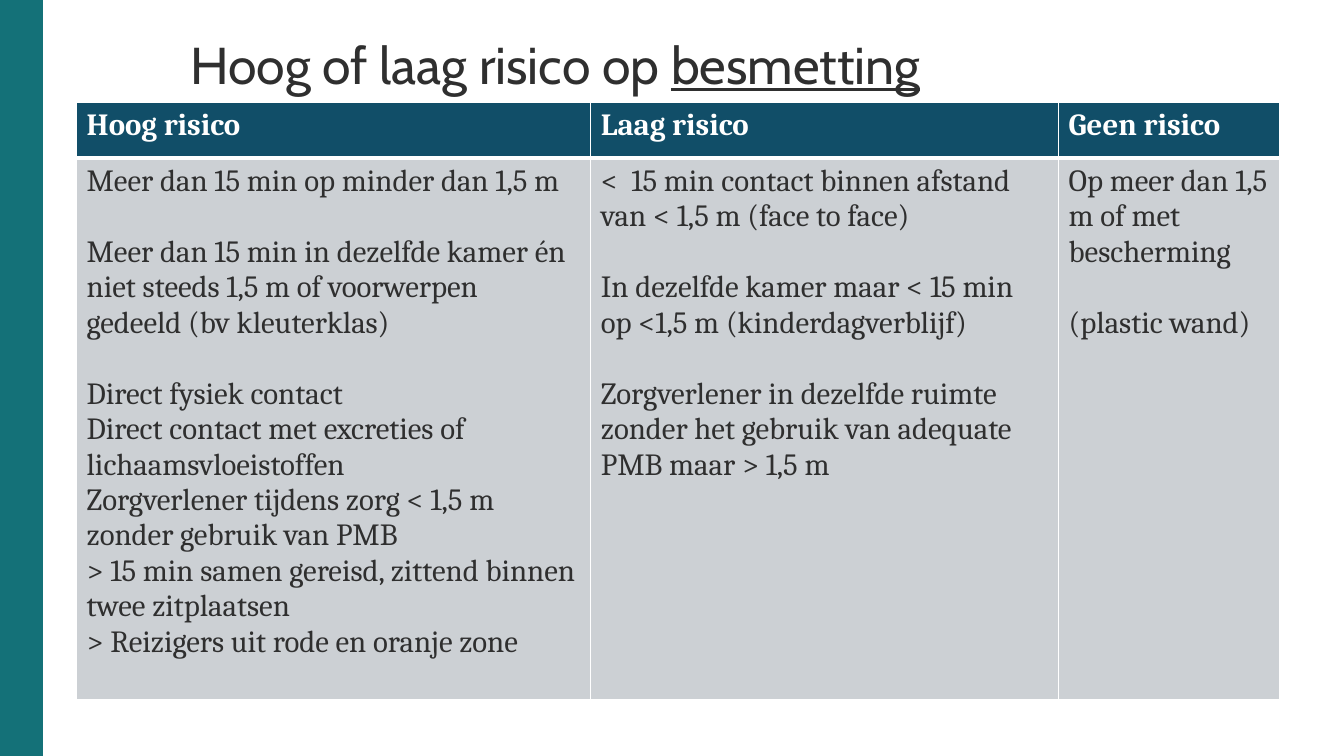
from dataclasses import dataclass

from lxml.etree import SubElement
from pptx import Presentation
from pptx.dml.color import RGBColor as Color
from pptx.enum.shapes import MSO_SHAPE as Shape
from pptx.enum.text import MSO_ANCHOR as Anchor, MSO_AUTO_SIZE as AutoSize, PP_ALIGN as Align
from pptx.oxml.ns import qn
from pptx.util import Inches, Pt


@dataclass(frozen=True)
class Theme:
    bar: str = "147178"
    header: str = "114E68"
    body: str = "CCD0D4"
    ink: str = "2F2F2F"
    white: str = "FFFFFF"
    title_font: str = "Cabin"
    table_font: str = "Cambria"
    title_size: float = 37
    title_line: float = 38
    table_size: float = 22
    group_gap: float = 25.4


THEME = Theme()
COLUMN_WIDTHS = (5.1, 4.64, 2.19)
ROW_HEIGHTS = (0.55, 5.37)
HEADERS = ("Hoog risico", "Laag risico", "Geen risico")
# Each column holds groups of paragraphs, with a gap between the groups.
RISKS = (
    (
        ("Meer dan 15 min op minder dan 1,5 m",),
        ("Meer dan 15 min in dezelfde kamer én niet steeds 1,5 m of "
         "voorwerpen  gedeeld (bv kleuterklas)",),
        ("Direct fysiek contact",
         "Direct contact met excreties of lichaamsvloeistoffen",
         "Zorgverlener tijdens zorg < 1,5 m zonder gebruik van PMB",
         "> 15 min samen gereisd, zittend binnen twee zitplaatsen",
         "> Reizigers uit rode en oranje zone"),
    ),
    (
        ("<  15 min contact binnen afstand van < 1,5 m (face to face)",),
        ("In dezelfde kamer maar < 15 min op <1,5 m (kinderdagverblijf)",),
        ("Zorgverlener in dezelfde ruimte zonder het gebruik van adequate "
         "PMB maar > 1,5 m",),
    ),
    (
        ("Op meer dan 1,5 m of met bescherming",),
        ("(plastic wand)",),
    ),
)


def add_side_bar(page, height):
    bar = page.shapes.add_shape(Shape.RECTANGLE, 0, 0, Inches(0.42), height)
    bar.shadow.inherit = False
    bar.fill.solid()
    bar.fill.fore_color.rgb = Color.from_string(THEME.bar)
    bar.line.color.rgb = Color.from_string(THEME.bar)
    bar.line.width = Pt(1)


def set_font(para, name, size, color, bold=False):
    para.font.name = name
    para.font.size = Pt(size)
    para.font.bold = bold
    para.font.color.rgb = Color.from_string(color)


def fill_title(page, text, underlined):
    title = page.shapes.title
    title.left, title.top = Inches(1.89), Inches(0.41)
    title.width, title.height = Inches(10.81), Inches(1.22)
    frame = title.text_frame
    frame.margin_left = frame.margin_right = frame.margin_top = frame.margin_bottom = 0
    frame.vertical_anchor = Anchor.TOP
    frame.auto_size = AutoSize.NONE
    frame.word_wrap = True
    para = frame.paragraphs[0]
    para.alignment = Align.LEFT
    para.line_spacing = Pt(THEME.title_line)
    para.add_run().text = text
    span = para.add_run()
    span.text = underlined
    span.font.underline = True
    set_font(para, THEME.title_font, THEME.title_size, THEME.ink)


def set_borders(cell, top=1, bottom=1):
    """Draw white cell borders; call before the fill is set."""
    properties = cell._tc.get_or_add_tcPr()
    for side, width in (("L", 1), ("R", 1), ("T", top), ("B", bottom)):
        line = SubElement(properties, qn(f"a:ln{side}"), w=str(Pt(width)))
        fill = SubElement(line, qn("a:solidFill"))
        SubElement(fill, qn("a:srgbClr"), val=THEME.white)


def fill_cell(cell, groups, fill, color, bold=False):
    cell.fill.solid()
    cell.fill.fore_color.rgb = Color.from_string(fill)
    frame = cell.text_frame
    for group_index, group in enumerate(groups):
        for index, text in enumerate(group):
            first = group_index == index == 0
            para = frame.paragraphs[0] if first else frame.add_paragraph()
            para.text = text
            set_font(para, THEME.table_font, THEME.table_size, color, bold)
            if index == 0 and not first:
                para.space_before = Pt(THEME.group_gap)


def add_risk_table(page):
    table = page.shapes.add_table(
        len(ROW_HEIGHTS), len(COLUMN_WIDTHS), Inches(0.76), Inches(1.02),
        Inches(sum(COLUMN_WIDTHS)), Inches(sum(ROW_HEIGHTS))).table
    for row, height in zip(table.rows, ROW_HEIGHTS):
        row.height = Inches(height)
    for index, (width, header, groups) in enumerate(zip(COLUMN_WIDTHS, HEADERS, RISKS)):
        table.columns[index].width = Inches(width)
        head, body = table.cell(0, index), table.cell(1, index)
        set_borders(head, bottom=3)
        set_borders(body, top=3)
        fill_cell(head, ((header,),), THEME.header, THEME.white, bold=True)
        fill_cell(body, groups, THEME.body, THEME.ink)


def main():
    deck = Presentation()
    deck.slide_width, deck.slide_height = Inches(13.33), Inches(7.5)
    page = deck.slides.add_slide(deck.slide_layouts[5])
    add_side_bar(page, deck.slide_height)
    fill_title(page, "Hoog of laag risico op ", "besmetting")
    add_risk_table(page)
    deck.save("out.pptx")


if __name__ == "__main__":
    main()
